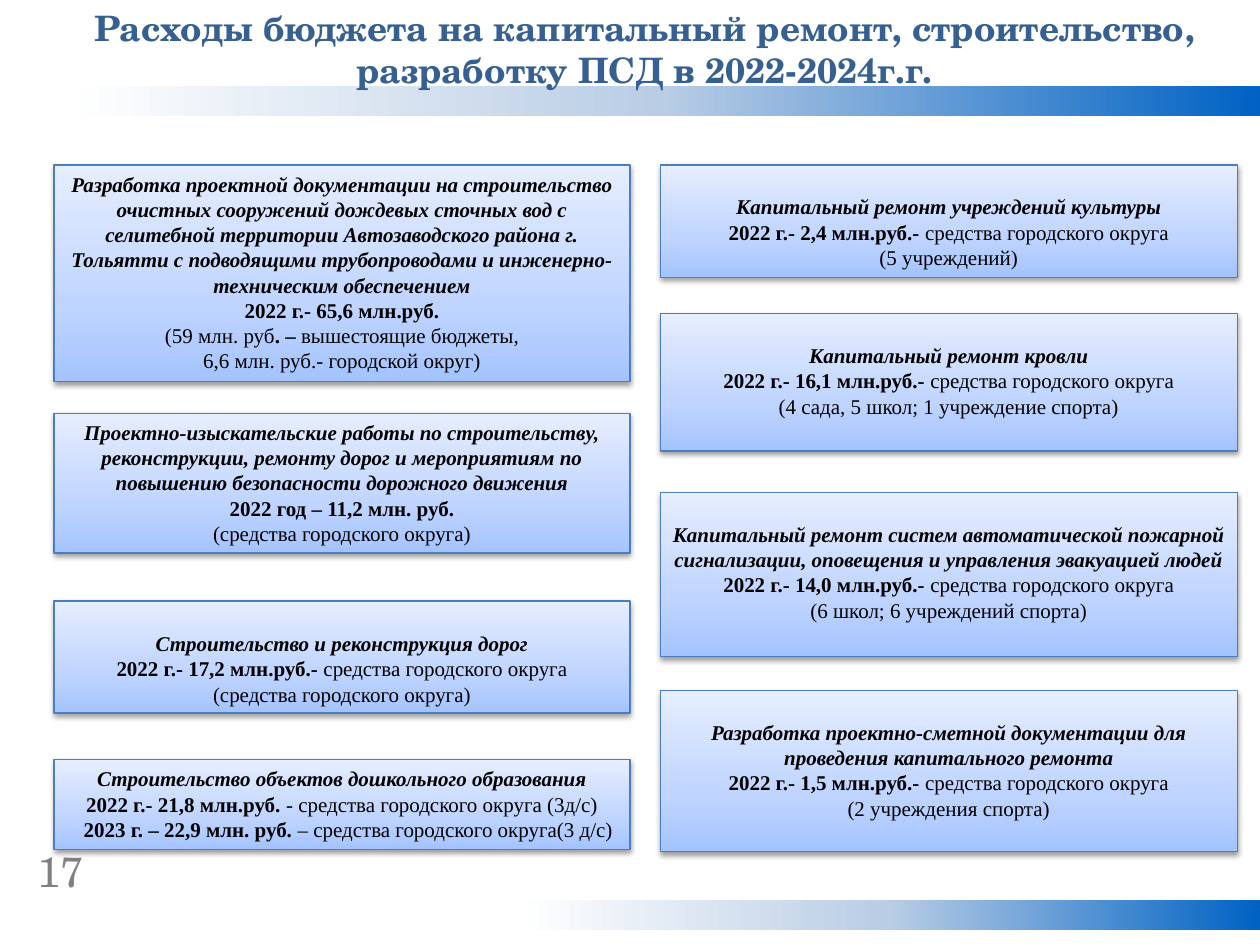
from copy import deepcopy
from dataclasses import dataclass

from lxml.etree import SubElement
from pptx import Presentation
from pptx.dml.color import RGBColor
from pptx.enum.shapes import MSO_SHAPE as Shape
from pptx.enum.text import MSO_ANCHOR as Anchor, MSO_AUTO_SIZE as AutoSize, PP_ALIGN as Align
from pptx.oxml.ns import qn
from pptx.util import Inches, Pt


@dataclass(frozen=True)
class Theme:
    title_font: str = "TeX Gyre Schola"
    body_font: str = "Times New Roman"
    title_size: int = 20
    body_size: int = 12
    number_size: int = 24
    title: str = "376092"
    number: str = "808080"
    text: str = "000000"
    card_line: str = "4B7EBC"
    shadow: str = "000000"
    bar_fill: tuple = ((0, "0062C4"), (0.5, "B9CDE5"), (1, "FFFFFF"))
    card_fill: tuple = ((0, "A4C4FF"), (0.35, "BFD4FF"), (1, "E6EEFF"))


@dataclass(frozen=True)
class Column:
    left: float
    width: float


@dataclass(frozen=True)
class Card:
    column: Column
    top: float
    height: float
    heading: str
    lines: tuple  # each line is a tuple of (text, bold) spans
    lowered: bool = True  # text starts one line below the top edge
    anchor: Anchor = Anchor.TOP
    last_indent: float = 0


THEME = Theme()
LEFT = Column(0.43, 4.57)
RIGHT = Column(5.24, 4.58)


def city_lines(amount: str, note: str) -> tuple:
    """Sum paid by the city, with a note on what it covers."""
    return (((f"2022 г.- {amount} млн.руб.- ", True), ("средства городского округа", False)),
            ((note, False),))


CARDS = (
    Card(LEFT, 1.31, 1.72,
         "Разработка проектной документации на строительство очистных сооружений дождевых "
         "сточных вод с селитебной территории Автозаводского района г. Тольятти с подводящими "
         "трубопроводами и инженерно-техническим обеспечением",
         ((("2022 г.- 65,6 млн.руб.", True),),
          (("(59 млн. руб", False), (". – ", True), ("вышестоящие бюджеты,", False)),
          (("6,6 млн. руб.- городской округ)", False),)), lowered=False),
    Card(LEFT, 3.28, 1.11,
         "Проектно-изыскательские работы по строительству, реконструкции, ремонту дорог "
         "и мероприятиям по повышению безопасности дорожного движения",
         ((("2022 год – 11,2 млн. руб.", True),),
          (("(средства городского округа)", False),)), lowered=False),
    Card(LEFT, 4.77, 0.89, "Строительство и реконструкция дорог",
         city_lines("17,2", "(средства городского округа)"), anchor=Anchor.MIDDLE),
    Card(LEFT, 6.03, 0.71, "Строительство объектов дошкольного образования",
         ((("2022 г.- 21,8 млн.руб. ", True), ("- средства городского округа (3д/с)", False)),
          (("2023 г. – 22,9 млн. руб. ", True), ("– средства городского округа(3 д/с)", False))),
         lowered=False, last_indent=0.1),
    Card(RIGHT, 1.31, 0.89, "Капитальный ремонт учреждений культуры",
         city_lines("2,4", "(5 учреждений)")),
    Card(RIGHT, 2.49, 1.09, "Капитальный ремонт кровли",
         city_lines("16,1", "(4 сада, 5 школ; 1 учреждение спорта)")),
    Card(RIGHT, 3.91, 1.3,
         "Капитальный ремонт систем автоматической пожарной сигнализации, оповещения "
         "и управления эвакуацией людей",
         city_lines("14,0", "(6 школ; 6 учреждений спорта)")),
    Card(RIGHT, 5.48, 1.28,
         "Разработка проектно-сметной документации для проведения капитального ремонта",
         city_lines("1,5", "(2 учреждения спорта)")),
)


def add_span(para, text: str, *, font: str = THEME.body_font, size: int = THEME.body_size,
             color: str = THEME.text, bold: bool = False, italic: bool = False) -> None:
    span = para.add_run()
    span.text = text
    span.font.name = font
    span.font.size = Pt(size)
    span.font.color.rgb = RGBColor.from_string(color)
    span.font.bold = bold
    span.font.italic = italic


def set_frame(frame, *, anchor: Anchor = Anchor.TOP, top: float = 0.05) -> None:
    frame.word_wrap = True
    frame.auto_size = AutoSize.NONE
    frame.vertical_anchor = anchor
    frame.margin_left = frame.margin_right = Inches(0.1)
    frame.margin_top, frame.margin_bottom = Inches(top), Inches(0.05)


def add_gradient_box(page, left: float, top: float, width: float, height: float,
                     stops: tuple, angle: int):
    box = page.shapes.add_shape(Shape.RECTANGLE, Inches(left), Inches(top),
                                Inches(width), Inches(height))
    box.shadow.inherit = False
    box.line.fill.background()
    box.fill.gradient()
    box.fill.gradient_angle = angle
    # The preset gradient has two stops; one more makes three
    stop_list = next(box.element.spPr.iter(qn("a:gsLst")))
    stop_list.append(deepcopy(stop_list[0]))
    for stop, (position, color) in zip(box.fill.gradient_stops, stops):
        stop.position = position
        stop.color.rgb = RGBColor.from_string(color)
    return box


def add_drop_shadow(box) -> None:
    effects = box.element.spPr.find(qn("a:effectLst"))
    shadow = SubElement(effects, qn("a:outerShdw"), blurRad=str(Pt(3.1)), dist=str(Pt(1.6)),
                        dir="5400000", rotWithShape="0")
    color = SubElement(shadow, qn("a:srgbClr"), val=THEME.shadow)
    SubElement(color, qn("a:alpha"), val="38000")


def add_card(page, card: Card) -> None:
    box = add_gradient_box(page, card.column.left, card.top, card.column.width, card.height,
                           THEME.card_fill, 90)
    box.line.color.rgb = RGBColor.from_string(THEME.card_line)
    box.line.width = Pt(0.75)
    add_drop_shadow(box)

    frame = box.text_frame
    set_frame(frame, anchor=card.anchor, top=0.23 if card.lowered else 0.05)
    para = frame.paragraphs[0]
    para.alignment = Align.CENTER
    add_span(para, card.heading, bold=True, italic=True)
    for line in card.lines:
        para = frame.add_paragraph()
        para.alignment = Align.CENTER
        for text, bold in line:
            add_span(para, text, bold=bold)
    if card.last_indent:
        para._p.get_or_add_pPr().set("marL", str(Inches(card.last_indent)))


def add_title(page, text: str) -> None:
    title = page.shapes.title
    title.left, title.top = Inches(0.35), Inches(0)
    title.width, title.height = Inches(9.53), Inches(0.77)
    set_frame(title.text_frame)
    para = title.text_frame.paragraphs[0]
    para.alignment = Align.CENTER
    add_span(para, text, font=THEME.title_font, size=THEME.title_size,
             color=THEME.title, bold=True)
    # Bring the title in front of the bar
    page.shapes.element.append(title.element)


def add_page_number(page, number: str) -> None:
    box = page.shapes.add_textbox(Inches(0.2), Inches(6.66), Inches(0.78), Inches(0.5))
    set_frame(box.text_frame)
    add_span(box.text_frame.paragraphs[0], number, font=THEME.title_font,
             size=THEME.number_size, color=THEME.number)


def main() -> None:
    deck = Presentation()
    deck.slide_width, deck.slide_height = Inches(10), Inches(7.5)
    page = deck.slides.add_slide(deck.slide_layouts[5])

    # Bars that run to the right edge
    for left, top in ((0.51, 0.68), (4.1, 7.14)):
        add_gradient_box(page, left, top, 10 - left, 0.24, THEME.bar_fill, 180)

    add_page_number(page, "17")
    add_title(page, "Расходы бюджета на капитальный ремонт, строительство, "
                    "разработку ПСД в 2022-2024г.г.")

    # Spending cards in two columns
    for card in CARDS:
        add_card(page, card)

    deck.save("out.pptx")


if __name__ == "__main__":
    main()
